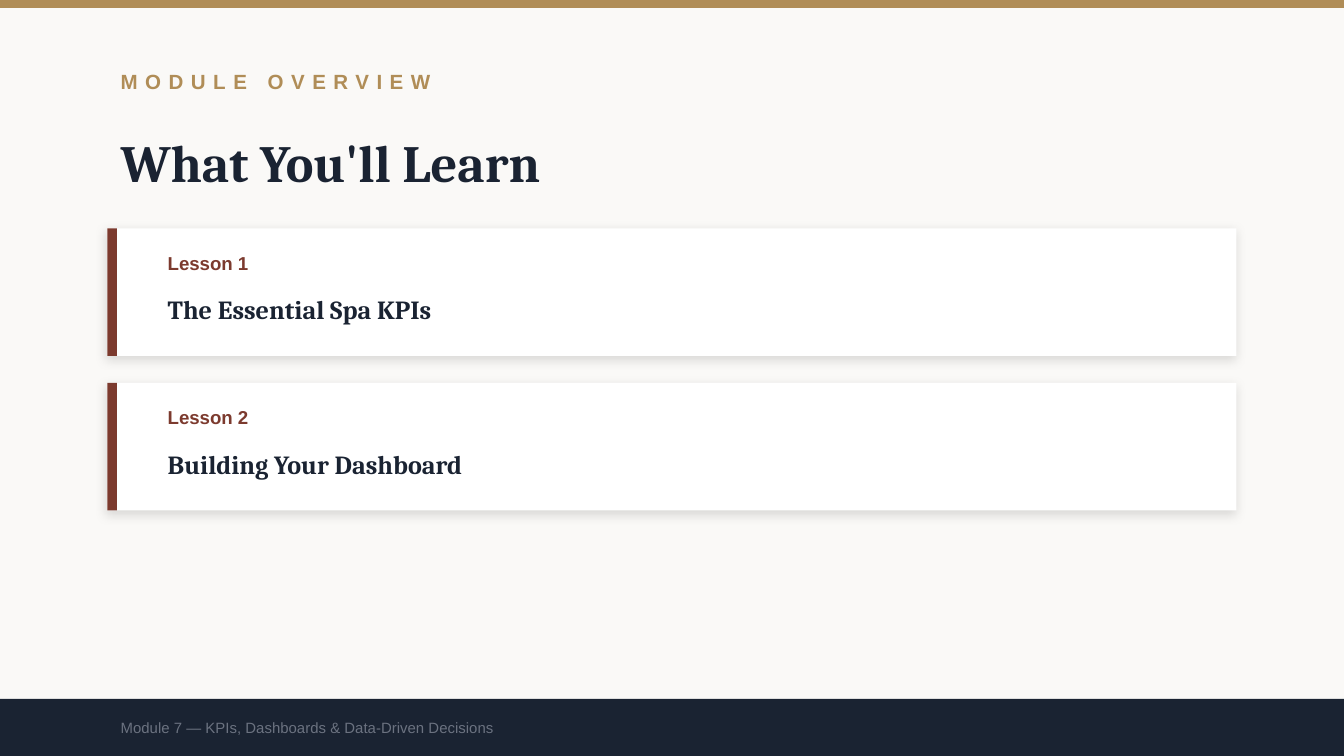
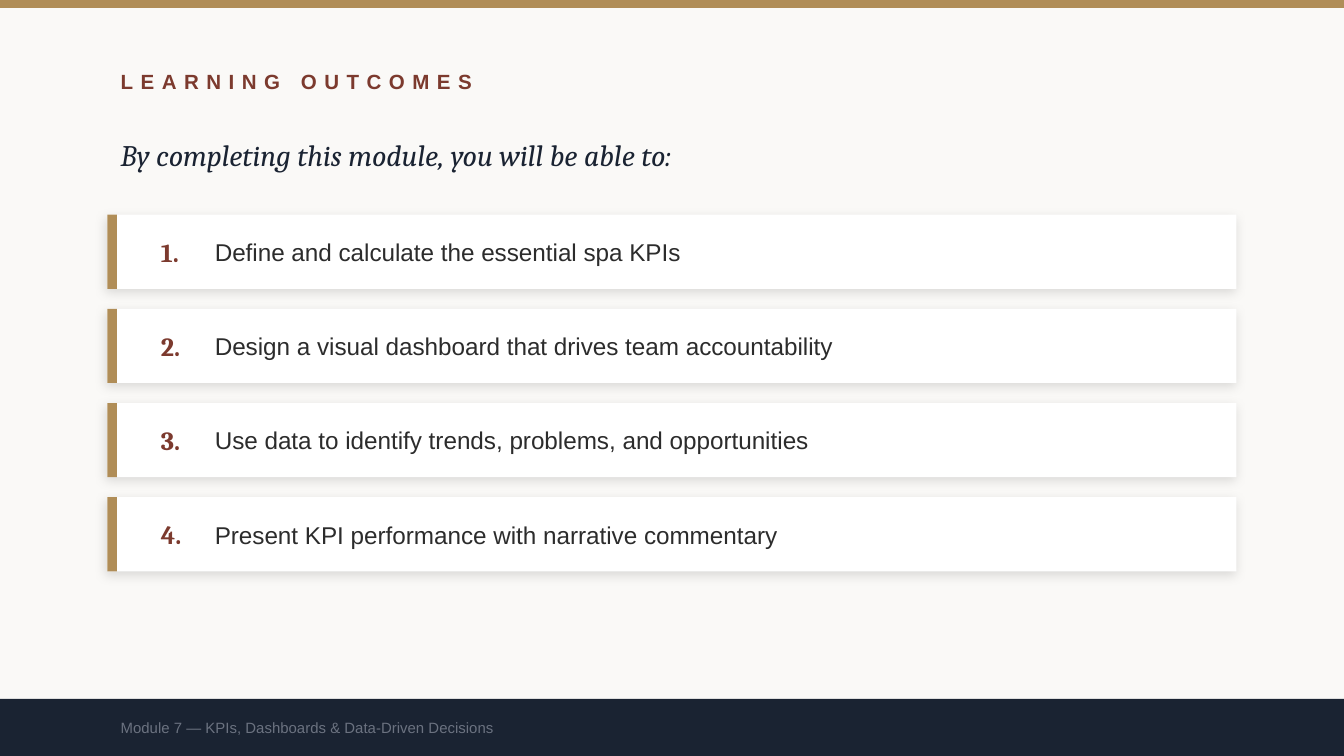
from lxml.etree import SubElement as Sub
from pptx import Presentation as Deck
from pptx.dml.color import RGBColor as RGB
from pptx.enum.shapes import MSO_SHAPE as Kind
from pptx.enum.text import MSO_ANCHOR as Anchor
from pptx.oxml.ns import qn
from pptx.util import Cm, Pt

GOLD = RGB(0xB0, 0x8D, 0x57)
RUST = RGB(0x7C, 0x3A, 0x2E)
NAVY = RGB(0x1A, 0x23, 0x32)
CREAM = RGB(0xFA, 0xF9, 0xF7)
WHITE = RGB(0xFF, 0xFF, 0xFF)
GREY = RGB(0x6B, 0x72, 0x80)
INK = RGB(0x2C, 0x2C, 0x2C)
BLACK = RGB(0, 0, 0)

WIDE, HIGH = 25.4, 14.29
LEFT, SPAN = 2.03, 20.32
FOOT = "Module 7 — KPIs, Dashboards & Data-Driven Decisions"

KICKER = {"name": "Arial", "size": Pt(11), "bold": True}
TITLE = {"name": "Cambria", "size": Pt(28), "bold": True}
LEAD = {"name": "Cambria", "size": Pt(16), "italic": True}
LABEL = {"name": "Arial", "size": Pt(10), "bold": True}
HEAD = {"name": "Cambria", "size": Pt(14), "bold": True}
BODY = {"name": "Arial", "size": Pt(13)}
SMALL = {"name": "Arial", "size": Pt(8)}


class Page:
    def __init__(self, deck, kicker, tint):
        self.slide = deck.slides.add_slide(deck.slide_layouts[6])
        fill = self.slide.background.fill
        fill.solid()
        fill.fore_color.rgb = CREAM
        self.rect(0, 0, WIDE, 0.15, GOLD)
        run = self.text(kicker, LEFT, 1.02, SPAN, 1.02, KICKER, tint)
        run.font._element.set("spc", "400")

    def rect(self, x, y, w, h, tint):
        box = self.slide.shapes.add_shape(
            Kind.RECTANGLE, Cm(x), Cm(y), Cm(w), Cm(h))
        box.shadow.inherit = False
        box.fill.solid()
        box.fill.fore_color.rgb = tint
        box.line.fill.background()
        return box

    def text(self, words, x, y, w, h, style, tint):
        frame = self.slide.shapes.add_textbox(
            Cm(x), Cm(y), Cm(w), Cm(h)).text_frame
        frame.word_wrap = True
        frame.vertical_anchor = Anchor.MIDDLE
        run = frame.paragraphs[0].add_run()
        run.text = words
        for key, value in style.items():
            setattr(run.font, key, value)
        run.font.color.rgb = tint
        return run

    def card(self, y, h, tint):
        box = self.rect(LEFT, y, 21.34, h, WHITE)
        glow = Sub(box._element.spPr.find(qn("a:effectLst")),
                   qn("a:outerShdw"), blurRad=str(Pt(6)), dist=str(Pt(2)),
                   dir="8100000", algn="bl", rotWithShape="0")
        shade = Sub(glow, qn("a:srgbClr"), val=str(BLACK))
        Sub(shade, qn("a:alpha"), val="12000")
        self.rect(LEFT, y, 0.18, h, tint)

    def lesson(self, y, label, name):
        self.card(y, 2.41, RUST)
        self.text(label, 2.92, y + 0.2, 17.78, 0.89, LABEL, RUST)
        self.text(name, 2.92, y + 1.02, 19.81, 1.02, HEAD, NAVY)

    def goal(self, y, mark, words):
        self.card(y, 1.4, GOLD)
        self.text(mark, 2.79, y, 1.02, 1.4, HEAD, RUST)
        self.text(words, 3.81, y, 18.8, 1.4, BODY, INK)

    def footer(self):
        self.rect(0, 13.21, WIDE, HIGH - 13.21, NAVY)
        self.text(FOOT, LEFT, 13.21, SPAN, 1.07, SMALL, GREY)


def main():
    deck = Deck()
    deck.slide_width, deck.slide_height = Cm(WIDE), Cm(HIGH)

    page = Page(deck, "MODULE OVERVIEW", GOLD)
    page.text("What You'll Learn", LEFT, 2.29, SPAN, 1.52, TITLE, NAVY)
    names = ["The Essential Spa KPIs", "Building Your Dashboard"]
    for i, name in enumerate(names):
        page.lesson(4.32 + i * 2.92, f"Lesson {i + 1}", name)
    page.footer()

    page = Page(deck, "LEARNING OUTCOMES", RUST)
    page.text("By completing this module, you will be able to:",
              LEFT, 2.29, SPAN, 1.27, LEAD, NAVY)
    goals = [
        "Define and calculate the essential spa KPIs",
        "Design a visual dashboard that drives team accountability",
        "Use data to identify trends, problems, and opportunities",
        "Present KPI performance with narrative commentary",
    ]
    for i, words in enumerate(goals):
        page.goal(4.06 + i * 1.78, f"{i + 1}.", words)
    page.footer()

    deck.save("out.pptx")


if __name__ == "__main__":
    main()
